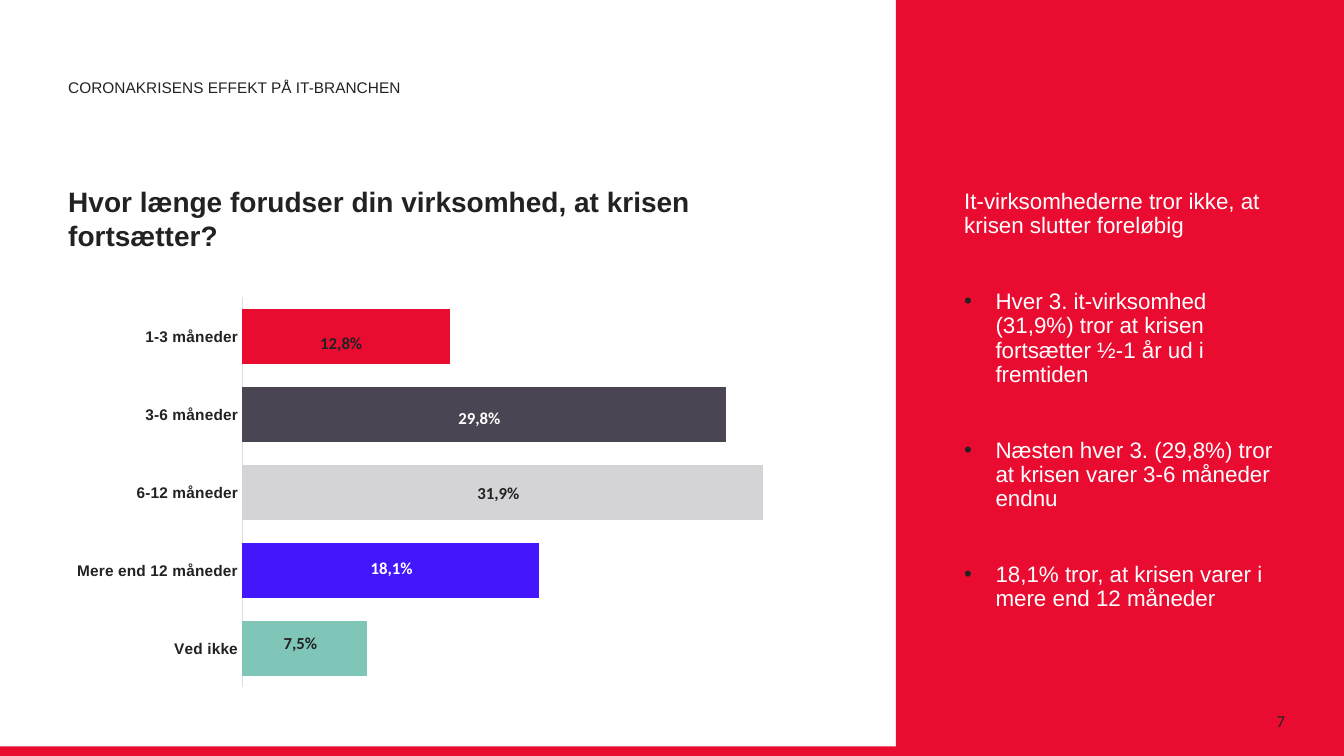
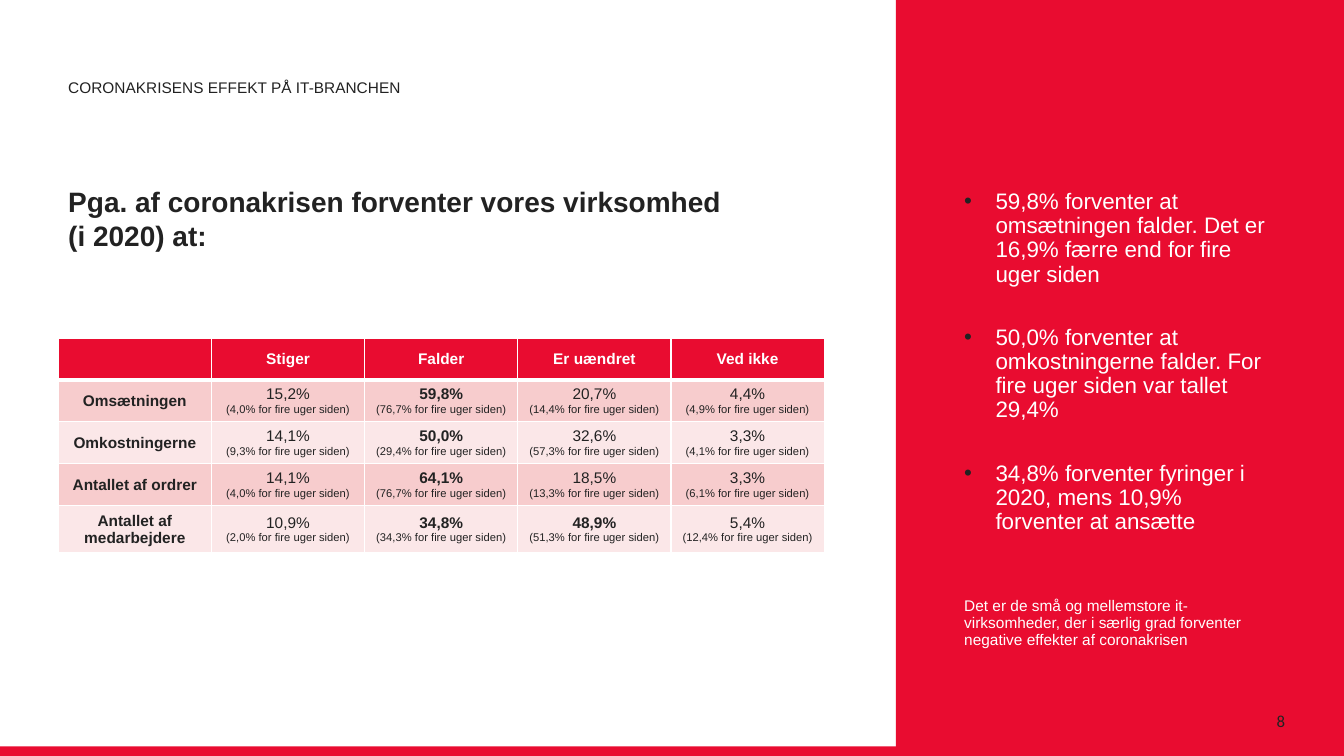
from dataclasses import dataclass
from typing import Any

from lxml.etree import Element, SubElement
from pptx import Presentation
from pptx.chart.data import CategoryChartData
from pptx.dml.color import RGBColor
from pptx.enum.chart import XL_CHART_TYPE as ChartType, XL_TICK_MARK as TickMark
from pptx.enum.shapes import MSO_SHAPE as Preset
from pptx.enum.text import MSO_ANCHOR as Anchor, PP_ALIGN as Align
from pptx.oxml.ns import qn
from pptx.util import Cm, Pt

COLORS = {
    "red": "E90C30", "ink": "222222", "white": "FFFFFF", "axis": "DEDEDE",
    "slate": "4A4453", "grey": "D4D3D6", "blue": "4316FB", "teal": "80C6B8",
    "band_dark": "F7CCCD", "band_light": "FBE7E8",
}
PAGE_WIDTH, PAGE_HEIGHT = 33.87, 19.05
LEFT, CONTENT_WIDTH = 1.47, 19.3
SIDE_LEFT, SIDE_WIDTH, SIDE_TOP = 24.05, 8.33, 4.67
HEADING = "CORONAKRISENS EFFEKT PÅ IT-BRANCHEN"


@dataclass(frozen=True)
class Box:
    left: float
    top: float
    width: float
    height: float

    def lengths(self) -> tuple[Cm, ...]:
        return Cm(self.left), Cm(self.top), Cm(self.width), Cm(self.height)


@dataclass(frozen=True)
class Style:
    size: float
    color: str = "ink"
    bold: bool = False
    family: str = "Arial"


@dataclass(frozen=True)
class Point:
    text: str
    bullet: bool = True


@dataclass(frozen=True)
class Answer:
    """One bar: its category, its length and the share written on it."""
    category: str
    length: int
    color: str
    share: str
    share_center: float
    share_color: str = "ink"


@dataclass(frozen=True)
class Share:
    now: str
    before: str
    bold: bool = False


HEADING_STYLE = Style(11)
TITLE_STYLE = Style(20, bold=True)
SIDE_STYLE = Style(16, "white")
NOTE_STYLE = Style(11, "white")
NUMBER_STYLE = Style(12, family="Calibri")

ANSWERS = [
    Answer("1-3 måneder", 40, "red", "12,8%", 8.6),
    Answer("3-6 måneder", 93, "slate", "29,8%", 12.08, "white"),
    Answer("6-12 måneder", 100, "grey", "31,9%", 12.56),
    Answer("Mere end 12 måneder", 57, "blue", "18,1%", 9.87, "white"),
    Answer("Ved ikke", 24, "teal", "7,5%", 7.57),
]
DURATION_POINTS = [
    Point("It-virksomhederne tror ikke, at krisen slutter foreløbig", bullet=False),
    Point("Hver 3. it-virksomhed (31,9%) tror at krisen fortsætter ½-1 år ud i fremtiden"),
    Point("Næsten hver 3. (29,8%) tror at krisen varer 3-6 måneder endnu"),
    Point("18,1% tror, at krisen varer i mere end 12 måneder"),
]
EXPECTATION_POINTS = [
    Point("59,8% forventer at omsætningen falder. Det er 16,9% færre end for fire uger siden"),
    Point("50,0% forventer at omkostningerne falder. For fire uger siden var tallet 29,4%"),
    Point("34,8% forventer fyringer i 2020, mens 10,9% forventer at ansætte"),
]
EXPECTATION_NOTE = ("Det er de små og mellemstore it-virksomheder, der i særlig grad "
                    "forventer negative effekter af coronakrisen")
DIRECTIONS = ["", "Stiger", "Falder", "Er uændret", "Ved ikke"]
EXPECTATIONS = {
    "Omsætningen": [Share("15,2%", "4,0%"), Share("59,8%", "76,7%", True),
                    Share("20,7%", "14,4%"), Share("4,4%", "4,9%")],
    "Omkostningerne": [Share("14,1%", "9,3%"), Share("50,0%", "29,4%", True),
                       Share("32,6%", "57,3%"), Share("3,3%", "4,1%")],
    "Antallet af ordrer": [Share("14,1%", "4,0%"), Share("64,1%", "76,7%", True),
                           Share("18,5%", "13,3%"), Share("3,3%", "6,1%")],
    "Antallet af medarbejdere": [Share("10,9%", "2,0%"), Share("34,8%", "34,3%", True),
                                 Share("48,9%", "51,3%", True), Share("5,4%", "12,4%")],
}


def rgb(color: str) -> RGBColor:
    return RGBColor.from_string(COLORS[color])


def apply(target: Any, formats: dict[str, Any]) -> None:
    for attribute, value in formats.items():
        setattr(target, attribute, value)


def set_font(font: Any, style: Style) -> None:
    apply(font, {"name": style.family, "size": Pt(style.size), "bold": style.bold})
    font.color.rgb = rgb(style.color)


def add_run(paragraph: Any, text: str, style: Style) -> None:
    run = paragraph.add_run()
    run.text = text
    set_font(run.font, style)


def add_lines(paragraph: Any, lines: list[tuple[str, Style]]) -> None:
    """Write runs with a line break between each two."""
    for index, (text, style) in enumerate(lines):
        if index:
            paragraph.add_line_break()
        add_run(paragraph, text, style)


def add_frame(slide: Any, box: Box, anchor: Any = Anchor.TOP, wrap: bool = True) -> Any:
    frame = slide.shapes.add_textbox(*box.lengths()).text_frame
    apply(frame, {"word_wrap": wrap, "vertical_anchor": anchor})
    return frame


def set_bullet(paragraph: Any) -> None:
    properties = paragraph._p.get_or_add_pPr()
    indent = Cm(0.79)
    properties.set("marL", str(indent))
    properties.set("indent", str(-indent))
    color = SubElement(properties, qn("a:buClr"))
    SubElement(color, qn("a:srgbClr"), val=COLORS["ink"])
    SubElement(properties, qn("a:buFont"), typeface="Arial")
    SubElement(properties, qn("a:buChar"), char="•")


def add_points(slide: Any, box: Box, points: list[Point], style: Style, gap: float) -> None:
    frame = add_frame(slide, box)
    for index, point in enumerate(points):
        paragraph = frame.add_paragraph() if index else frame.paragraphs[0]
        paragraph.line_spacing = 0.9
        if index:
            paragraph.space_before = Pt(gap)
        if point.bullet:
            set_bullet(paragraph)
        add_run(paragraph, point.text, style)


def add_base(deck: Any, title: list[str], number: int) -> Any:
    """Add a slide with the red bands, heading, title and page number."""
    slide = deck.slides.add_slide(deck.slide_layouts[6])
    side_band = Box(22.58, 0, 11.29, PAGE_HEIGHT)
    foot_band = Box(0, 18.81, PAGE_WIDTH, 0.24)
    for box in (side_band, foot_band):
        band = slide.shapes.add_shape(Preset.RECTANGLE, *box.lengths())
        band.shadow.inherit = False
        band.fill.solid()
        band.fill.fore_color.rgb = rgb("red")
        band.line.fill.background()

    heading = add_frame(slide, Box(LEFT, 1.8, CONTENT_WIDTH, 0.76), Anchor.BOTTOM).paragraphs[0]
    heading.line_spacing = 0.9
    add_run(heading, HEADING, HEADING_STYLE)

    title_frame = add_frame(slide, Box(LEFT, 3.66, CONTENT_WIDTH, 2.82), Anchor.BOTTOM)
    add_lines(title_frame.paragraphs[0], [(line, TITLE_STYLE) for line in title])

    number_frame = add_frame(slide, Box(24.77, 17.65, 7.62, 1.02), Anchor.MIDDLE)
    number_frame.margin_right = 0
    number_frame.paragraphs[0].alignment = Align.RIGHT
    add_run(number_frame.paragraphs[0], str(number), NUMBER_STYLE)
    return slide


def fix_plot_area(chart: Any, fractions: dict[str, float]) -> None:
    """Place the inner plot area at fractions of the chart."""
    plot_area = chart._chartSpace.chart.plotArea
    for old in plot_area.findall(qn("c:layout")):
        plot_area.remove(old)
    layout = Element(qn("c:layout"))
    plot_area.insert(0, layout)
    manual = SubElement(layout, qn("c:manualLayout"))
    settings = {"layoutTarget": "inner", "xMode": "edge", "yMode": "edge", **fractions}
    for tag, value in settings.items():
        SubElement(manual, qn(f"c:{tag}"), val=str(value))


def add_answers_chart(slide: Any, box: Box) -> None:
    bottom_up = ANSWERS[::-1]
    data = CategoryChartData()
    data.categories = [answer.category for answer in bottom_up]
    data.add_series("Series 1", [answer.length for answer in bottom_up])
    chart = slide.shapes.add_chart(ChartType.BAR_CLUSTERED, *box.lengths(), data).chart
    apply(chart, {"has_legend": False, "has_title": False})
    set_font(chart.font, Style(10, family="Calibri"))
    apply(chart.plots[0], {"gap_width": 40, "vary_by_categories": False})
    apply(chart.value_axis, {"visible": False, "has_major_gridlines": False,
                             "minimum_scale": 0, "maximum_scale": 100})
    categories = chart.category_axis
    apply(categories, {"major_tick_mark": TickMark.NONE, "minor_tick_mark": TickMark.NONE})
    set_font(categories.tick_labels.font, Style(11, bold=True))
    categories.format.line.width = Pt(0.75)
    categories.format.line.color.rgb = rgb("axis")
    fix_plot_area(chart, {"x": 0.24, "y": 0.02, "w": 0.68, "h": 0.96})

    series = chart.plots[0].series[0]
    for index, answer in enumerate(bottom_up):
        fill = series.points[index].format.fill
        fill.solid()
        fill.fore_color.rgb = rgb(answer.color)


def add_answer_shares(slide: Any) -> None:
    width, first_top, step = 1.6, 8.25, 1.89
    for index, answer in enumerate(ANSWERS):
        box = Box(answer.share_center - width / 2, first_top + index * step, width, 0.77)
        share = add_frame(slide, box, wrap=False).paragraphs[0]
        share.alignment = Align.CENTER
        add_run(share, answer.share, Style(12, answer.share_color, True, "Calibri"))


def set_cell(cell: Any, lines: list[tuple[str, Style]], color: str,
             top: float = 1, bottom: float = 1) -> None:
    cell.vertical_anchor = Anchor.MIDDLE
    properties = cell._tc.get_or_add_tcPr()
    for side, width in {"L": 1, "R": 1, "T": top, "B": bottom}.items():
        line = SubElement(properties, qn(f"a:ln{side}"), w=str(Pt(width)))
        fill = SubElement(line, qn("a:solidFill"))
        SubElement(fill, qn("a:srgbClr"), val=COLORS["white"])
    cell.fill.solid()
    cell.fill.fore_color.rgb = rgb(color)
    paragraph = cell.text_frame.paragraphs[0]
    paragraph.alignment = Align.CENTER
    add_lines(paragraph, lines)


def add_expectations_table(slide: Any) -> None:
    row_height, head_rule = 1.04, 3
    row_count, column_count = len(EXPECTATIONS) + 1, len(DIRECTIONS)
    box = Box(LEFT, 8.53, CONTENT_WIDTH, row_height * row_count)
    table = slide.shapes.add_table(row_count, column_count, *box.lengths()).table
    for column in table.columns:
        column.width = Cm(CONTENT_WIDTH / column_count)
    for row in table.rows:
        row.height = Cm(row_height)

    for column, direction in enumerate(DIRECTIONS):
        lines = [(direction, Style(11, "white", True))] if direction else []
        set_cell(table.cell(0, column), lines, "red", bottom=head_rule)
    for row, (topic, shares) in enumerate(EXPECTATIONS.items(), start=1):
        color = "band_dark" if row % 2 else "band_light"
        top = head_rule if row == 1 else 1
        set_cell(table.cell(row, 0), [(topic, Style(11, bold=True))], color, top)
        for column, share in enumerate(shares, start=1):
            lines = [(share.now, Style(11, bold=share.bold)),
                     (f"({share.before} for fire uger siden)", Style(8))]
            set_cell(table.cell(row, column), lines, color, top)


def build_duration_slide(deck: Any) -> None:
    title = ["Hvor længe forudser din virksomhed, at krisen fortsætter?"]
    slide = add_base(deck, title, 7)
    add_answers_chart(slide, Box(LEFT, 7.29, CONTENT_WIDTH, 10.24))
    add_answer_shares(slide)
    add_points(slide, Box(SIDE_LEFT, SIDE_TOP, SIDE_WIDTH, 12.37), DURATION_POINTS, SIDE_STYLE, 37)


def build_expectations_slide(deck: Any) -> None:
    title = ["Pga. af coronakrisen forventer vores virksomhed", "(i 2020) at:"]
    slide = add_base(deck, title, 8)
    add_expectations_table(slide)
    add_points(slide, Box(SIDE_LEFT, SIDE_TOP, SIDE_WIDTH, 9.83), EXPECTATION_POINTS, SIDE_STYLE, 28)
    note = [Point(EXPECTATION_NOTE, bullet=False)]
    add_points(slide, Box(SIDE_LEFT, 14.96, SIDE_WIDTH, 3.2), note, NOTE_STYLE, 0)


def main() -> None:
    deck = Presentation()
    apply(deck, {"slide_width": Cm(PAGE_WIDTH), "slide_height": Cm(PAGE_HEIGHT)})
    build_duration_slide(deck)
    build_expectations_slide(deck)
    deck.save("out.pptx")


if __name__ == "__main__":
    main()
